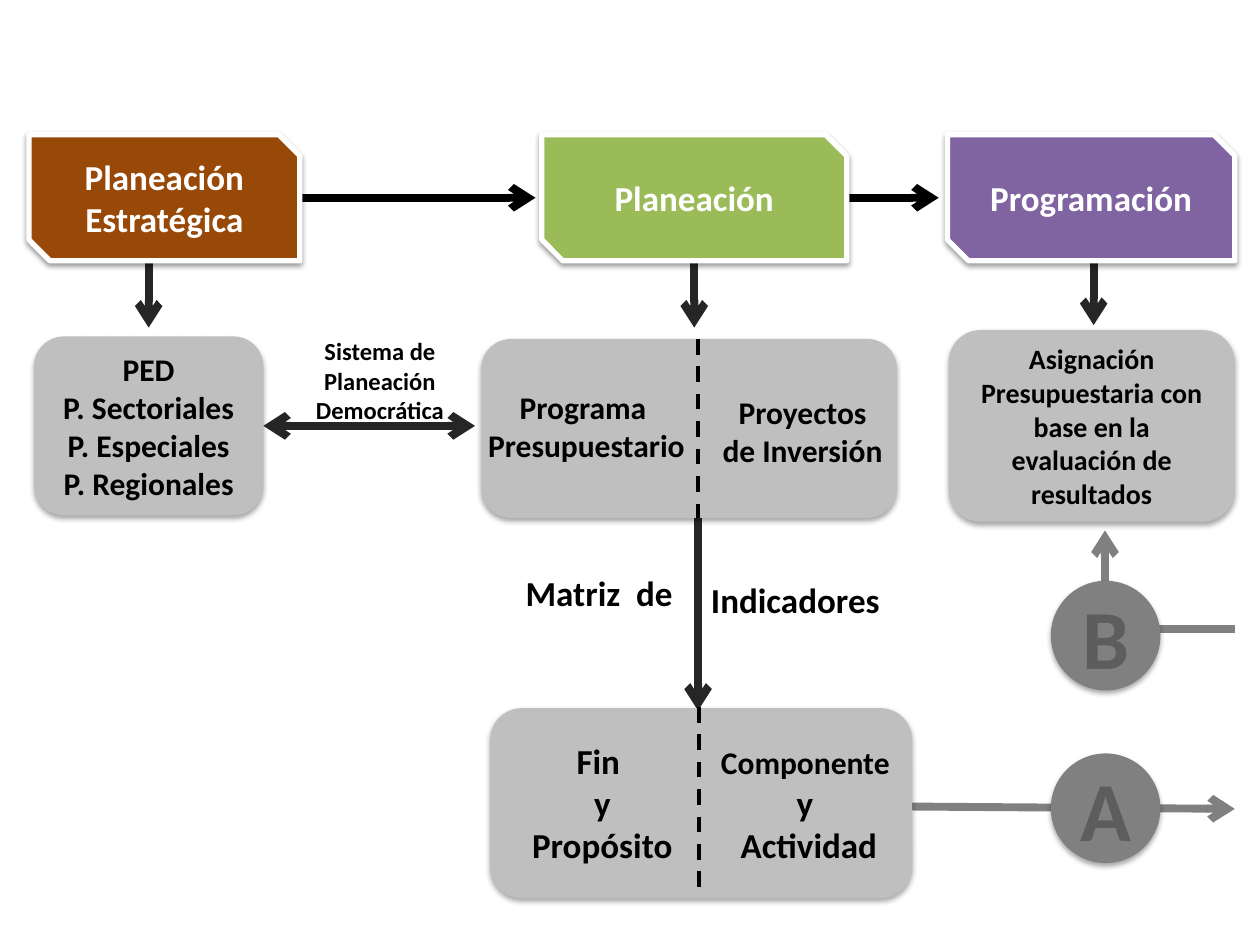
from lxml.etree import SubElement
from pptx import Presentation
from pptx.dml.color import RGBColor
from pptx.enum.dml import MSO_LINE as Dash
from pptx.enum.shapes import MSO_CONNECTOR as Connector, MSO_SHAPE as Shape
from pptx.enum.text import MSO_ANCHOR as Anchor, MSO_AUTO_SIZE as AutoSize, PP_ALIGN as Align
from pptx.oxml.ns import qn
from pptx.util import Inches, Pt

COLUMNS, ROWS = 100, 75
BLACK, WHITE = "000000", "FFFFFF"
CARD, DISC, DARK, LETTER = "BFBFBF", "808080", "262626", "5D5D5D"


def color(value):
    return RGBColor.from_string(value)


class Diagram:
    font = "Calibri"
    stroke = 4.5

    def __init__(self, deck):
        self.slide = deck.slides.add_slide(deck.slide_layouts[6])
        self.column = deck.slide_width / COLUMNS
        self.row = deck.slide_height / ROWS

    def place(self, *lengths):
        return [round(length * (self.row if index % 2 else self.column))
                for index, length in enumerate(lengths)]

    def set_text(self, frame, text, size, ink=BLACK, align=Align.CENTER):
        frame.text = text
        for paragraph in frame.paragraphs:
            paragraph.alignment = align
            for run in paragraph.runs:
                run.font.name = self.font
                run.font.size = Pt(size)
                run.font.bold = True
                run.font.color.rgb = color(ink)

    def shadow(self, shape, opacity, distance):
        shape.shadow.inherit = False
        effects = shape._element.spPr.find(qn("a:effectLst"))
        outer = SubElement(effects, qn("a:outerShdw"), blurRad=str(Pt(3.1)),
                           dist=str(Pt(distance)), dir="5400000", rotWithShape="0")
        ink = SubElement(outer, qn("a:srgbClr"), val=BLACK)
        SubElement(ink, qn("a:alpha"), val=str(opacity * 1000))

    def block(self, kind, area, fill, text="", size=18, ink=BLACK, border=None):
        shape = self.slide.shapes.add_shape(kind, *self.place(*area))
        shape.fill.solid()
        shape.fill.fore_color.rgb = color(fill)
        if border:
            shape.line.color.rgb = color(border)
            shape.line.width = Pt(3)
            self.shadow(shape, 38, 1.6)
        else:
            shape.line.fill.background()
            self.shadow(shape, 35, 1.8)
        if text:
            shape.text_frame.vertical_anchor = Anchor.MIDDLE
            self.set_text(shape.text_frame, text, size, ink)
        return shape

    def card(self, area, text="", size=18):
        return self.block(Shape.ROUNDED_RECTANGLE, area, CARD, text, size)

    def header(self, left, width, fill, text):
        return self.block(Shape.SNIP_2_DIAG_RECTANGLE, (left, 10.7, width, 10),
                          fill, text, 20, WHITE, WHITE)

    def disc(self, top, letter):
        return self.block(Shape.OVAL, (83.4, top, 8.7, 8.7), DISC, letter, 48, LETTER)

    def label(self, area, text, size=18, align=Align.CENTER, wrap=True):
        frame = self.slide.shapes.add_textbox(*self.place(*area)).text_frame
        frame.word_wrap = wrap
        frame.auto_size = AutoSize.SHAPE_TO_FIT_TEXT
        self.set_text(frame, text, size, align=align)
        return frame

    def link(self, points, ink, ends=("tailEnd",)):
        connector = self.slide.shapes.add_connector(Connector.STRAIGHT, *self.place(*points))
        connector.line.color.rgb = color(ink)
        connector.line.width = Pt(self.stroke)
        properties = connector._element.spPr
        for end in ends:
            SubElement(properties.find(qn("a:ln")), qn(f"a:{end}"), type="arrow")
        SubElement(properties, qn("a:effectLst"))
        return connector

    def divider(self, across, top, bottom):
        line = self.link((across, top, across, bottom), BLACK, ()).line
        line.width = Pt(2.25)
        line.dash_style = Dash.DASH


def main():
    deck = Presentation()
    deck.slide_width, deck.slide_height = Inches(10), Inches(7.5)
    diagram = Diagram(deck)

    plans = diagram.card((2.7, 26.7, 18.2, 14.2),
                         "PED\nP. Sectoriales\nP. Especiales\nP. Regionales")
    for start, end in ((23.2, 42.5), (66.5, 74.5)):
        diagram.link((start, 15.7, end, 15.7), BLACK)
    diagram.link((87.7, 49.9, 98, 49.9), DISC, ())
    diagram.link((70.8, 64, 98, 64.2), DISC)
    planning_system = diagram.link((20.9, 33.8, 37.7, 33.8), DARK, ("headEnd", "tailEnd"))
    planning_system.begin_connect(plans, 3)
    diagram.link((55.4, 41.1, 55.4, 56.4), DARK)
    for across, top in ((11.8, 14.3), (55.1, 14.3), (86.8, 14.1)):
        diagram.link((across, top, across, top + 11.7), DARK)

    diagram.card((38.2, 26.9, 33, 14.2))
    diagram.label((37.7, 30.3, 17.7, 7.1), "Programa \nPresupuestario", wrap=False)
    diagram.label((56.3, 30.7, 14.8, 7.1), "Proyectos\nde Inversión", wrap=False)
    diagram.divider(55.4, 26.9, 41.1)

    diagram.card((38.9, 56.2, 33.5, 15.1))
    diagram.label((40.4, 58.2, 14.8, 11.1), "Fin \ny Propósito", 20)
    activities = diagram.label((55.5, 58.5, 17.4, 10.8), "Componente \ny \nActividad")
    for paragraph in activities.paragraphs[1:]:
        paragraph.runs[0].font.size = Pt(20)
    diagram.divider(55.5, 56.1, 71.3)

    diagram.label((35.5, 44.9, 19.5, 4.4), "Matriz  de ", 20, Align.RIGHT)
    diagram.card((75.3, 26.2, 22.7, 15.2),
                 "Asignación Presupuestaria con base en la evaluación de resultados", 16)

    for left, width, fill, stage in (
        (2.3, 21.5, "984807", "Planeación\nEstratégica"),
        (43, 24.2, "9BBB59", "Planeación"),
        (75.2, 22.8, "8064A2", "Programación"),
    ):
        diagram.header(left, width, fill, stage)

    diagram.disc(59.8, "A")
    diagram.link((87.7, 47.9, 87.7, 42.1), DISC)
    diagram.disc(46.1, "B")
    diagram.label((54.7, 45.4, 16.1, 4.4), "Indicadores", 20, Align.RIGHT)
    diagram.label((20.7, 26.2, 18.9, 8.1), "Sistema de Planeación\nDemocrática", 14)

    deck.save("out.pptx")


if __name__ == "__main__":
    main()
